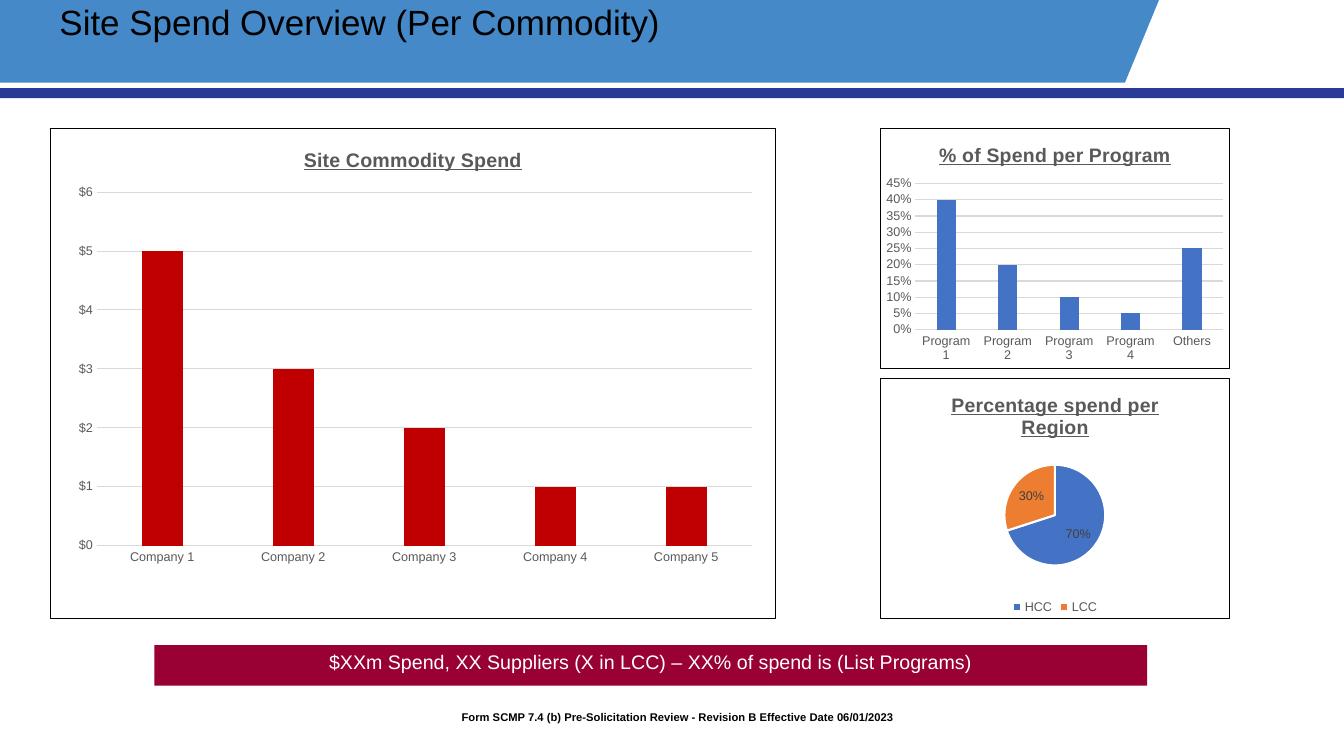
from lxml import etree
from pptx import Presentation
from pptx.chart import data
from pptx.dml.color import RGBColor
from pptx.enum import chart as kinds, shapes, text
from pptx.oxml import ns, parse_xml
from pptx.util import Pt

BLACK = RGBColor(0x00, 0x00, 0x00)
WHITE = RGBColor(0xFF, 0xFF, 0xFF)
SKY = RGBColor(0x45, 0x89, 0xC8)
NAVY = RGBColor(0x2A, 0x3B, 0x97)
MAROON = RGBColor(0x99, 0x00, 0x33)
RED = RGBColor(0xC0, 0x00, 0x00)
BLUE = RGBColor(0x44, 0x72, 0xC4)
ORANGE = RGBColor(0xED, 0x7D, 0x31)
GRAY = RGBColor(0x59, 0x59, 0x59)
DARK_GRAY = RGBColor(0x40, 0x40, 0x40)
GRID = RGBColor(0xD9, 0xD9, 0xD9)
FONT = "Arial"

WIDTH, HEIGHT = 960, 540
TITLE = "Site Spend Overview (Per Commodity)"
SUMMARY = "$XXm Spend, XX Suppliers (X in LCC) – XX% of spend is (List Programs)"
FOOTER = "Form SCMP 7.4 (b) Pre-Solicitation Review - Revision B Effective Date 06/01/2023"
BANNER_CUT = [(828, 0), (WIDTH, 0), (WIDTH, 62.9), (802.3, 62.9)]

COLUMN_CHARTS = [
    dict(title="Site Commodity Spend", area=(35.6, 91.4, 518.8, 351),
         plot=(0.064, 0.13, 0.903, 0.721), color=RED, format='"$"#,##0', top=6, step=1,
         values={"Company 1": 5, "Company 2": 3, "Company 3": 2, "Company 4": 1, "Company 5": 1}),
    dict(title="% of Spend per Program", area=(628.6, 91.4, 250.2, 172),
         plot=(0.1, 0.23, 0.88, 0.61), color=BLUE, format="0%", top=0.45, step=0.05,
         values={"Program 1": 0.4, "Program 2": 0.2, "Program 3": 0.1, "Program 4": 0.05, "Others": 0.25}),
]
REGION_CHART = dict(title="Percentage spend per Region", area=(628.6, 270, 250.2, 172),
                    plot=(0.354, 0.36, 0.29, 0.42), format="0%",
                    values={"HCC": 0.7, "LCC": 0.3})


def style_font(font, size, color):
    font.name, font.size = FONT, Pt(size)
    font.color.rgb = color


def write(frame, words, size=14, color=BLACK, bold=False, underline=False,
          align=text.PP_ALIGN.LEFT, spacing=None):
    para = frame.paragraphs[0]
    para.alignment = align
    if spacing:
        para.line_spacing = spacing
    span = para.add_run()
    span.text = words
    style_font(span.font, size, color)
    span.font.bold, span.font.underline = bold, underline
    return para


def paint(shape, color):
    shape.fill.solid()
    shape.fill.fore_color.rgb = color
    shape.line.fill.background()
    shape.shadow.inherit = False
    return shape


def add_bar(page, area, color):
    kind = shapes.MSO_SHAPE.RECTANGLE
    return paint(page.shapes.add_shape(kind, *map(Pt, area)), color)


def add_chart(page, kind, details):
    numbers = data.CategoryChartData(number_format=details["format"])
    numbers.categories = list(details["values"])
    numbers.add_series("Series 1", list(details["values"].values()))
    chart = page.shapes.add_chart(kind, *map(Pt, details["area"]), numbers).chart
    style_font(chart.font, 10, BLACK)
    chart.has_legend = False
    chart.has_title = True
    write(chart.chart_title.text_frame, details["title"], color=GRAY, bold=True,
          underline=True, align=text.PP_ALIGN.CENTER)
    frame_chart(chart, details["plot"])
    return chart


def frame_chart(chart, plot):
    root = chart.element
    border = parse_xml(
        f'<c:spPr {ns.nsdecls("c", "a")}><a:solidFill><a:srgbClr val="{WHITE}"/></a:solidFill>'
        f'<a:ln w="{Pt(0.75)}"><a:solidFill><a:srgbClr val="{BLACK}"/></a:solidFill></a:ln></c:spPr>')
    root.find(ns.qn("c:chart")).addnext(border)
    area = root.find(".//" + ns.qn("c:plotArea"))
    for old in area.findall(ns.qn("c:layout")):
        area.remove(old)
    layout = etree.Element(ns.qn("c:layout"))
    manual = etree.SubElement(layout, ns.qn("c:manualLayout"))
    settings = [("layoutTarget", "inner"), ("xMode", "edge"), ("yMode", "edge"), *zip("xywh", plot)]
    for name, value in settings:
        etree.SubElement(manual, ns.qn("c:" + name)).set("val", str(value))
    area.insert(0, layout)


def add_column_chart(page, details):
    chart = add_chart(page, kinds.XL_CHART_TYPE.COLUMN_CLUSTERED, details)
    bars = chart.plots[0]
    bars.vary_by_categories = False
    bars.gap_width, bars.overlap = 219, -27
    fill = bars.series[0].format.fill
    fill.solid()
    fill.fore_color.rgb = details["color"]
    for axis in (chart.category_axis, chart.value_axis):
        axis.major_tick_mark = axis.minor_tick_mark = kinds.XL_TICK_MARK.NONE
        style_font(axis.tick_labels.font, 9, GRAY)
    grid = chart.value_axis.major_gridlines.format.line
    for line in (chart.category_axis.format.line, grid):
        line.color.rgb, line.width = GRID, Pt(0.75)
    axis = chart.value_axis
    axis.format.line.fill.background()
    axis.minimum_scale, axis.maximum_scale = 0, details["top"]
    axis.major_unit = details["step"]
    axis.tick_labels.number_format = details["format"]
    axis.tick_labels.number_format_is_linked = False


def add_region_chart(page, details):
    chart = add_chart(page, kinds.XL_CHART_TYPE.PIE, details)
    chart.has_legend = True
    chart.legend.position = kinds.XL_LEGEND_POSITION.BOTTOM
    chart.legend.include_in_layout = False
    style_font(chart.legend.font, 9, GRAY)
    pie = chart.plots[0]
    pie.vary_by_categories = True
    for index, color in enumerate((BLUE, ORANGE)):
        look = pie.series[0].points[index].format
        look.fill.solid()
        look.fill.fore_color.rgb = color
        look.line.color.rgb, look.line.width = WHITE, Pt(1.5)
    labels = pie.series[0].data_labels
    labels.show_value = True
    labels.number_format, labels.number_format_is_linked = details["format"], False
    labels.position = kinds.XL_LABEL_POSITION.INSIDE_END
    style_font(labels.font, 9, DARK_GRAY)


def main():
    deck = Presentation()
    deck.slide_width, deck.slide_height = Pt(WIDTH), Pt(HEIGHT)
    page = deck.slides.add_slide(deck.slide_layouts[5])

    add_bar(page, (0, 0, 949.7, 59), SKY)
    outline = page.shapes.build_freeform(*BANNER_CUT[0], scale=Pt(1))
    outline.add_line_segments(BANNER_CUT[1:], close=True)
    paint(outline.convert_to_shape(), WHITE)
    add_bar(page, (0, 62.9, WIDTH, 7.2), NAVY)

    heading = page.shapes.title
    heading.left, heading.top, heading.width, heading.height = map(Pt, (35.3, 0, 683.3, 68.4))
    heading.text_frame.vertical_anchor = text.MSO_ANCHOR.TOP
    write(heading.text_frame, TITLE, size=25, spacing=0.9)
    heading.element.getparent().append(heading.element)

    for details in COLUMN_CHARTS:
        add_column_chart(page, details)
    add_region_chart(page, REGION_CHART)

    summary = add_bar(page, (110.2, 460.8, 709.2, 29), MAROON)
    summary.text_frame.word_wrap = True
    summary.text_frame.vertical_anchor = text.MSO_ANCHOR.TOP
    write(summary.text_frame, SUMMARY, color=WHITE, align=text.PP_ALIGN.CENTER)

    footer = page.shapes.add_textbox(*map(Pt, (304.6, 504.7, 351.4, 27.4)))
    footer.text_frame.word_wrap = True
    para = write(footer.text_frame, FOOTER, size=8, bold=True, spacing=0.9)
    indents = para.runs[0].font._element.getparent().getparent().get_or_add_pPr()
    indents.set("marL", str(Pt(36)))
    indents.set("indent", str(Pt(-18)))

    deck.save("out.pptx")


if __name__ == "__main__":
    main()
